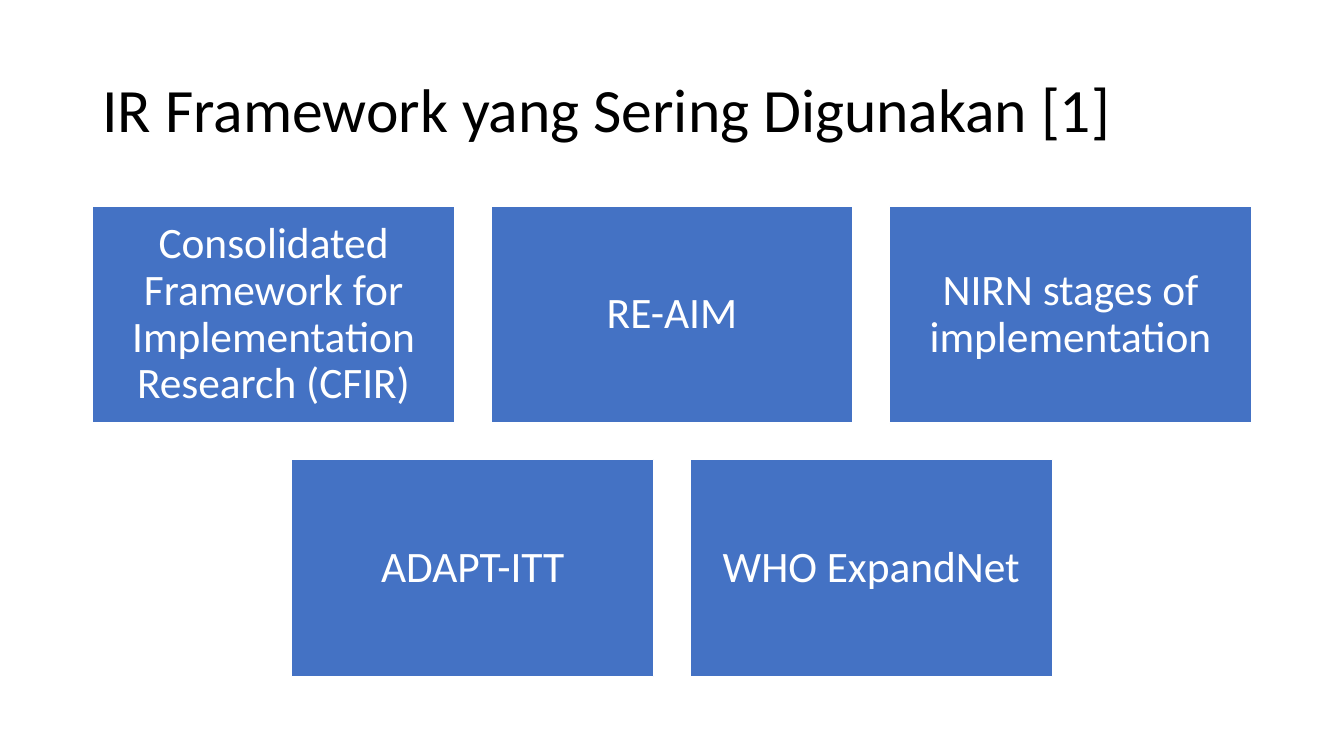
from pptx import Presentation
from pptx import util as u
from pptx.dml.color import RGBColor
from pptx.enum import shapes, text

PX = 9525
COLOURS = {"ink": "000000", "card": "4472C4", "paper": "FFFFFF"}
FONT = "Calibri"
CARD_WIDTH, CARD_HEIGHT, INSET = 345, 207, 12
FRAMEWORK_ROWS = [
    [
        "Consolidated Framework for Implementation Research (CFIR)",
        "RE-AIM",
        "NIRN stages of implementation",
    ],
    ["ADAPT-ITT", "WHO ExpandNet"],
]


def px(length):
    """Turn a length in px into EMU."""
    return u.Emu(round(length * PX))


def colour(name):
    """Look up a named colour."""
    return RGBColor.from_string(COLOURS[name])


def write(frame, wording, size, ink, align):
    """Write one styled, vertically centred paragraph into a text frame."""
    frame.word_wrap = True
    frame.auto_size = text.MSO_AUTO_SIZE.NONE
    frame.vertical_anchor = text.MSO_ANCHOR.MIDDLE
    para = frame.paragraphs[0]
    para.alignment = align
    para.line_spacing = 0.9
    span = para.add_run()
    span.text = wording
    span.font.name = FONT
    span.font.size = u.Pt(size)
    span.font.color.rgb = colour(ink)


def add_title(page, box, wording):
    """Place the title placeholder in the given box."""
    title = page.shapes.title
    title.left, title.top, title.width, title.height = map(px, box)
    write(title.text_frame, wording, 44, "ink", text.PP_ALIGN.LEFT)


def add_card(page, box, wording):
    """Draw one framework card filling the given box."""
    card = page.shapes.add_shape(shapes.MSO_SHAPE.RECTANGLE, *map(px, box))
    card.shadow.inherit = False
    card.fill.solid()
    card.fill.fore_color.rgb = colour("card")
    card.line.color.rgb = colour("paper")
    card.line.width = u.Pt(1)
    frame = card.text_frame
    frame.margin_left = frame.margin_right = px(INSET)
    frame.margin_top = frame.margin_bottom = px(INSET)
    write(frame, wording, 31, "paper", text.PP_ALIGN.CENTER)


def add_card_grid(page, box, rows):
    """Fill the box width with the longest row and centre the others."""
    left, top, width = box
    most = max(map(len, rows))
    gap = (width - most * CARD_WIDTH) / (most - 1)
    for row, names in enumerate(rows):
        row_width = len(names) * (CARD_WIDTH + gap) - gap
        row_left = left + (width - row_width) / 2
        card_top = top + row * (CARD_HEIGHT + gap)
        for column, wording in enumerate(names):
            card_left = row_left + column * (CARD_WIDTH + gap)
            add_card(page, (card_left, card_top, CARD_WIDTH, CARD_HEIGHT), wording)


def main():
    """Build and save the deck."""
    deck = Presentation()
    deck.slide_width, deck.slide_height = px(1280), px(720)
    page = deck.slides.add_slide(deck.slide_layouts.get_by_name("Title Only"))
    add_title(page, (88, 38, 1104, 139), "IR Framework yang Sering Digunakan [1]")
    add_card_grid(page, (88, 196, 1104), FRAMEWORK_ROWS)
    deck.save("out.pptx")


if __name__ == "__main__":
    main()
